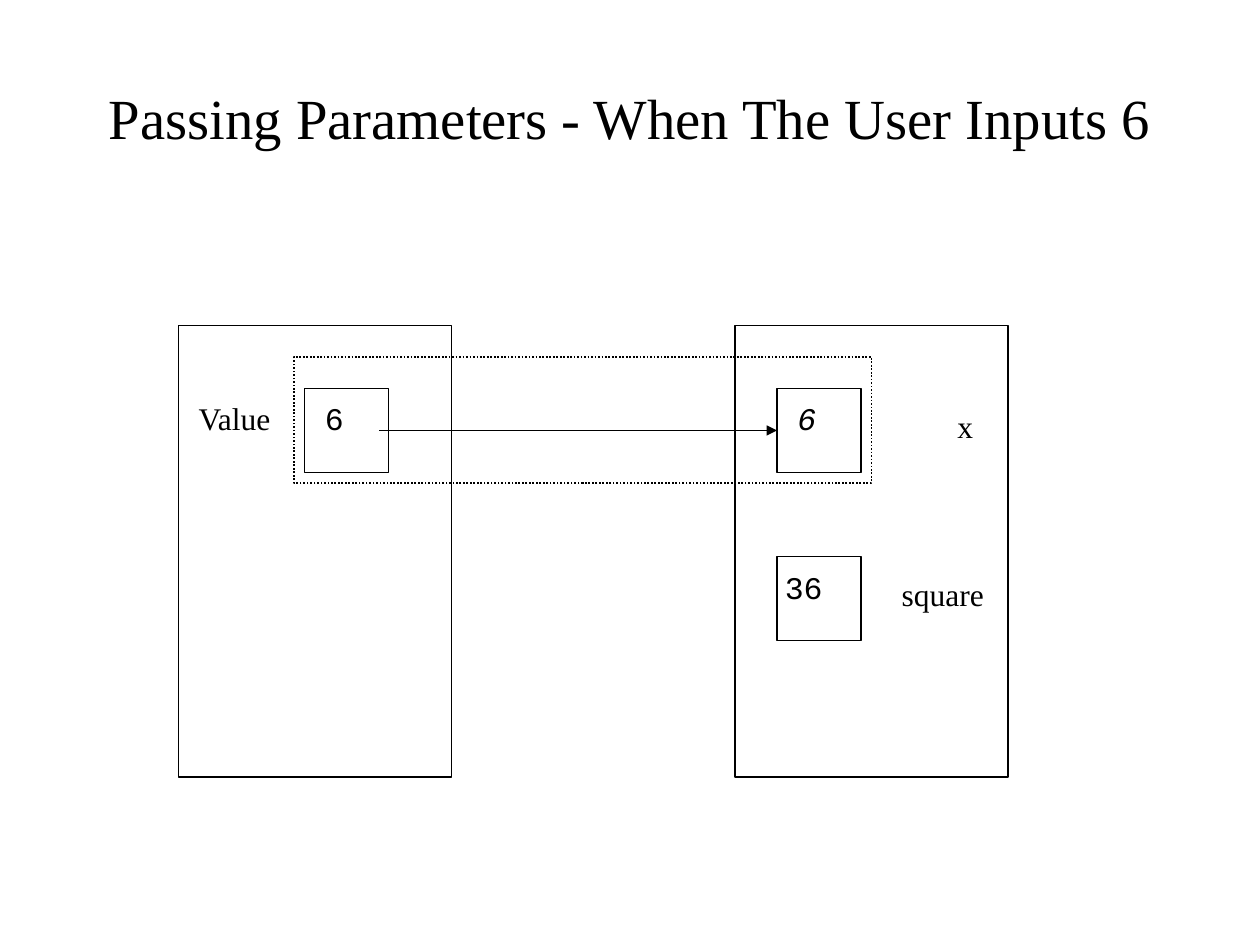
import dataclasses

import lxml.etree
import pptx
import pptx.dml.color
import pptx.enum.dml
import pptx.enum.shapes
import pptx.enum.text
import pptx.oxml.ns
import pptx.util

Pt = pptx.util.Pt


@dataclasses.dataclass(frozen=True)
class Theme:
    ink: pptx.dml.color.RGBColor = pptx.dml.color.RGBColor(0, 0, 0)
    serif: str = "Times New Roman"
    mono: str = "Courier New"
    title_size: float = 32.4
    body_size: float = 18
    line_width: float = 1


class Diagram:
    def __init__(self, slide, theme):
        self.slide = slide
        self.theme = theme

    def style_line(self, line):
        line.color.rgb = self.theme.ink
        line.width = Pt(self.theme.line_width)

    def box(self, left, top, width, height, dash=None):
        box = self.slide.shapes.add_shape(
            pptx.enum.shapes.MSO_SHAPE.RECTANGLE,
            Pt(left), Pt(top), Pt(width), Pt(height))
        box.shadow.inherit = False
        box.fill.background()
        self.style_line(box.line)
        if dash is not None:
            box.line.dash_style = dash
        return box

    def text(self, words, left, top, width, height, font, size, italic=None):
        frame = self.slide.shapes.add_textbox(
            Pt(left), Pt(top), Pt(width), Pt(height)).text_frame
        frame.text = words
        frame.word_wrap = False
        run_font = frame.paragraphs[0].runs[0].font
        run_font.name = font
        run_font.size = Pt(size)
        run_font.color.rgb = self.theme.ink
        run_font.italic = italic
        return frame

    def title(self, words, left, top, width, height):
        frame = self.text(words, left, top, width, height,
                          self.theme.serif, self.theme.title_size)
        frame.word_wrap = True
        frame.vertical_anchor = pptx.enum.text.MSO_ANCHOR.MIDDLE
        frame.paragraphs[0].alignment = pptx.enum.text.PP_ALIGN.CENTER

    def label(self, words, left, top, width, font, italic=None):
        frame = self.text(words, left, top, width, 29,
                          font, self.theme.body_size, italic)
        frame.auto_size = pptx.enum.text.MSO_AUTO_SIZE.SHAPE_TO_FIT_TEXT

    def arrow(self, left, y, target):
        arrow = self.slide.shapes.add_connector(
            pptx.enum.shapes.MSO_CONNECTOR.STRAIGHT,
            Pt(left), Pt(y), target.left, Pt(y))
        arrow.end_connect(target, 1)
        self.style_line(arrow.line)
        qn = pptx.oxml.ns.qn
        lxml.etree.SubElement(arrow.line._get_or_add_ln(), qn("a:tailEnd"), type="triangle")
        lxml.etree.SubElement(arrow._element.spPr, qn("a:effectLst"))


def main():
    deck = pptx.Presentation()
    deck.slide_width = Pt(720)
    deck.slide_height = Pt(540)
    theme = Theme()
    diagram = Diagram(deck.slides.add_slide(deck.slide_layouts[6]), theme)

    diagram.title("Passing Parameters - When The User Inputs 6", 36, 21.6, 648, 90)

    for frame_left in (102, 420):
        diagram.box(frame_left, 186, 156, 258)

    value_cell, x_cell, square_cell = [
        diagram.box(left, top, 48, 48)
        for left, top in ((174, 222), (444, 222), (444, 318))]

    for words, left, top, width in (
            ("Value", 106.5, 224.6, 57.6),
            ("x", 540, 229, 23.8),
            ("square", 508.2, 325, 62)):
        diagram.label(words, left, top, width, theme.serif)

    diagram.arrow(216.7, 246, x_cell)
    diagram.box(168, 204, 330, 72, pptx.enum.dml.MSO_LINE.ROUND_DOT)

    for words, left, top, width, italic in (
            ("6", 178.5, 224.6, 25.2, None),
            ("6", 448.5, 224.6, 25.2, True),
            ("36", 441.4, 321, 36, None)):
        diagram.label(words, left, top, width, theme.mono, italic)

    deck.save("out.pptx")


if __name__ == "__main__":
    main()
